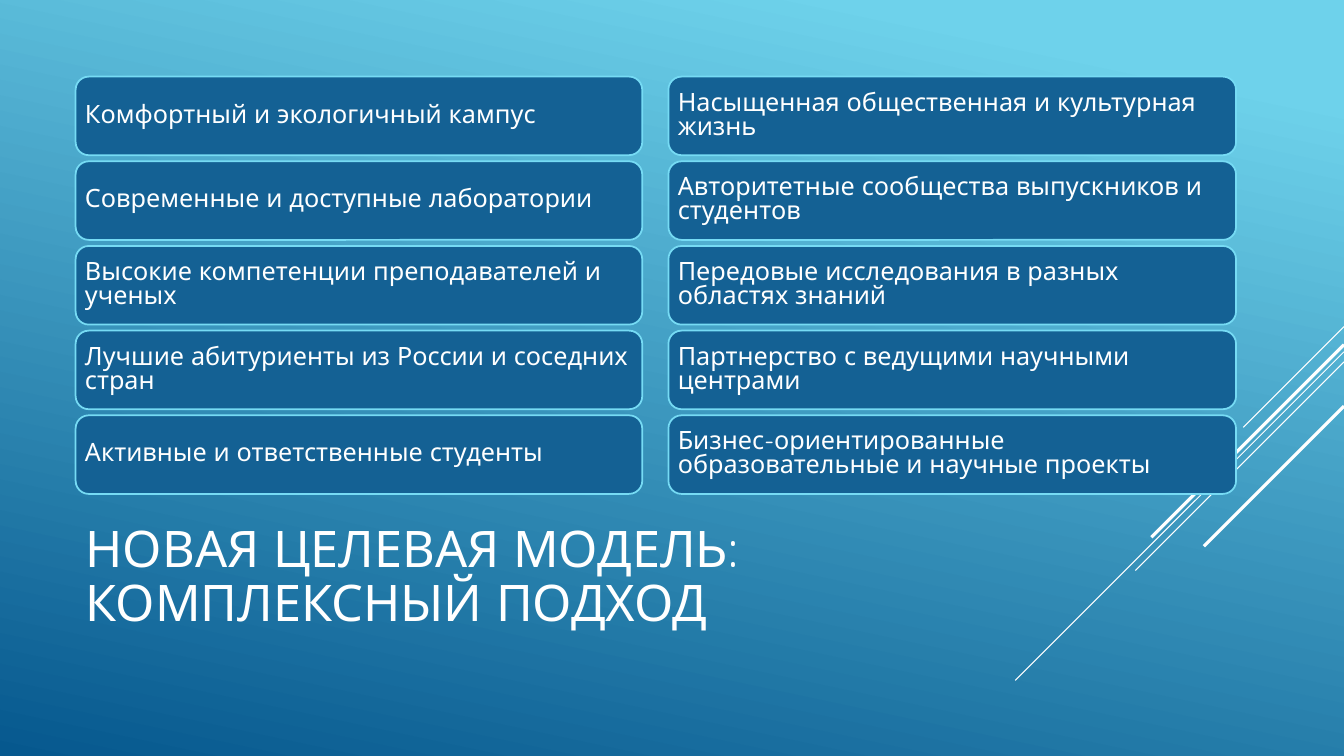
"""Builds the slide on the new target model: ten goals in two columns."""
import pptx
import pptx.dml.color
import pptx.enum.shapes
import pptx.enum.text
import pptx.oxml
import pptx.oxml.ns
import pptx.util

Inches = pptx.util.Inches
Pt = pptx.util.Pt

HEADING = "НОВАЯ ЦЕЛЕВАЯ МОДЕЛЬ: КОМПЛЕКСНЫЙ ПОДХОД"
GOAL_COLUMNS = [
    (0.75, 5.62, [
        "Комфортный и экологичный кампус",
        "Современные и доступные лаборатории",
        "Высокие компетенции преподавателей и ученых",
        "Лучшие абитуриенты из России и соседних стран",
        "Активные и ответственные студенты",
    ]),
    (6.63, 5.63, [
        "Насыщенная общественная и культурная жизнь",
        "Авторитетные сообщества выпускников и студентов",
        "Передовые исследования в разных областях знаний",
        "Партнерство с ведущими научными центрами",
        "Бизнес-ориентированные образовательные и научные проекты",
    ]),
]
RAYS = [
    (3.24, 1.0, 0.75),
    (3.49, 3.26, 0.75),
    (3.59, 2.07, 0.75),
    (3.42, 1.91, 2.25),
    (4.03, 1.39, 2.25),
]
COLORS = {
    "sky": "6ED2EB",
    "deep": "06588E",
    "goal": "146194",
    "edge": "76DBF4",
    "white": "FFFFFF",
}
FONT = "Quicksand"
SLIDE_WIDTH, SLIDE_HEIGHT = 13.33, 7.5
GOAL_TOP, GOAL_HEIGHT, GOAL_PITCH = 0.76, 0.78, 0.84
GOAL_INSET = 0.11


def color(name):
    return pptx.dml.color.RGBColor.from_string(COLORS[name])


def write(shape, text, size, spacing):
    frame = shape.text_frame
    frame.text = text
    frame.word_wrap = True
    frame.auto_size = pptx.enum.text.MSO_AUTO_SIZE.NONE
    frame.vertical_anchor = pptx.enum.text.MSO_ANCHOR.MIDDLE
    paragraph = frame.paragraphs[0]
    paragraph.alignment = pptx.enum.text.PP_ALIGN.LEFT
    paragraph.line_spacing = spacing
    font = paragraph.runs[0].font
    font.name = FONT
    font.size = Pt(size)
    font.color.rgb = color("white")


def paint_background(slide):
    fill = slide.background.fill
    fill.gradient()
    fill.gradient_angle = 360 - 102
    for stop, (position, name) in zip(fill.gradient_stops, [(0.1, "sky"), (1, "deep")]):
        stop.position = position
        stop.color.rgb = color(name)


def add_ray(slide, top, run, weight):
    ray = slide.shapes.add_connector(
        pptx.enum.shapes.MSO_CONNECTOR.STRAIGHT,
        Inches(SLIDE_WIDTH), Inches(top), Inches(SLIDE_WIDTH - run), Inches(top + run))
    ray.line.color.rgb = color("white")
    ray.line.width = Pt(weight)
    ray._element.spPr.append(pptx.oxml.parse_xml(
        "<a:effectLst %s/>" % pptx.oxml.ns.nsdecls("a")))


def add_goal(slide, left, top, width, text):
    goal = slide.shapes.add_shape(
        pptx.enum.shapes.MSO_SHAPE.ROUNDED_RECTANGLE,
        Inches(left), Inches(top), Inches(width), Inches(GOAL_HEIGHT))
    goal.shadow.inherit = False
    goal.fill.solid()
    goal.fill.fore_color.rgb = color("goal")
    goal.line.color.rgb = color("edge")
    goal.line.width = Pt(1.25)
    write(goal, text, 18, 0.8)
    frame = goal.text_frame
    frame.margin_left = frame.margin_right = Inches(GOAL_INSET / 2)
    frame.margin_top = frame.margin_bottom = Inches(GOAL_INSET / 2)


def main():
    deck = pptx.Presentation()
    deck.slide_width = Inches(SLIDE_WIDTH)
    deck.slide_height = Inches(SLIDE_HEIGHT)
    slide = deck.slides.add_slide(deck.slide_layouts[5])
    paint_background(slide)

    for top, run, weight in RAYS:
        add_ray(slide, top, run, weight)

    title = slide.shapes.title
    title.left, title.top = Inches(0.75), Inches(4.91)
    title.width, title.height = Inches(9.33), Inches(1.65)
    write(title, HEADING, 36, 0.9)

    for left, width, goals in GOAL_COLUMNS:
        for row, text in enumerate(goals):
            add_goal(slide, left, GOAL_TOP + row * GOAL_PITCH, width, text)

    deck.save("out.pptx")


if __name__ == "__main__":
    main()
